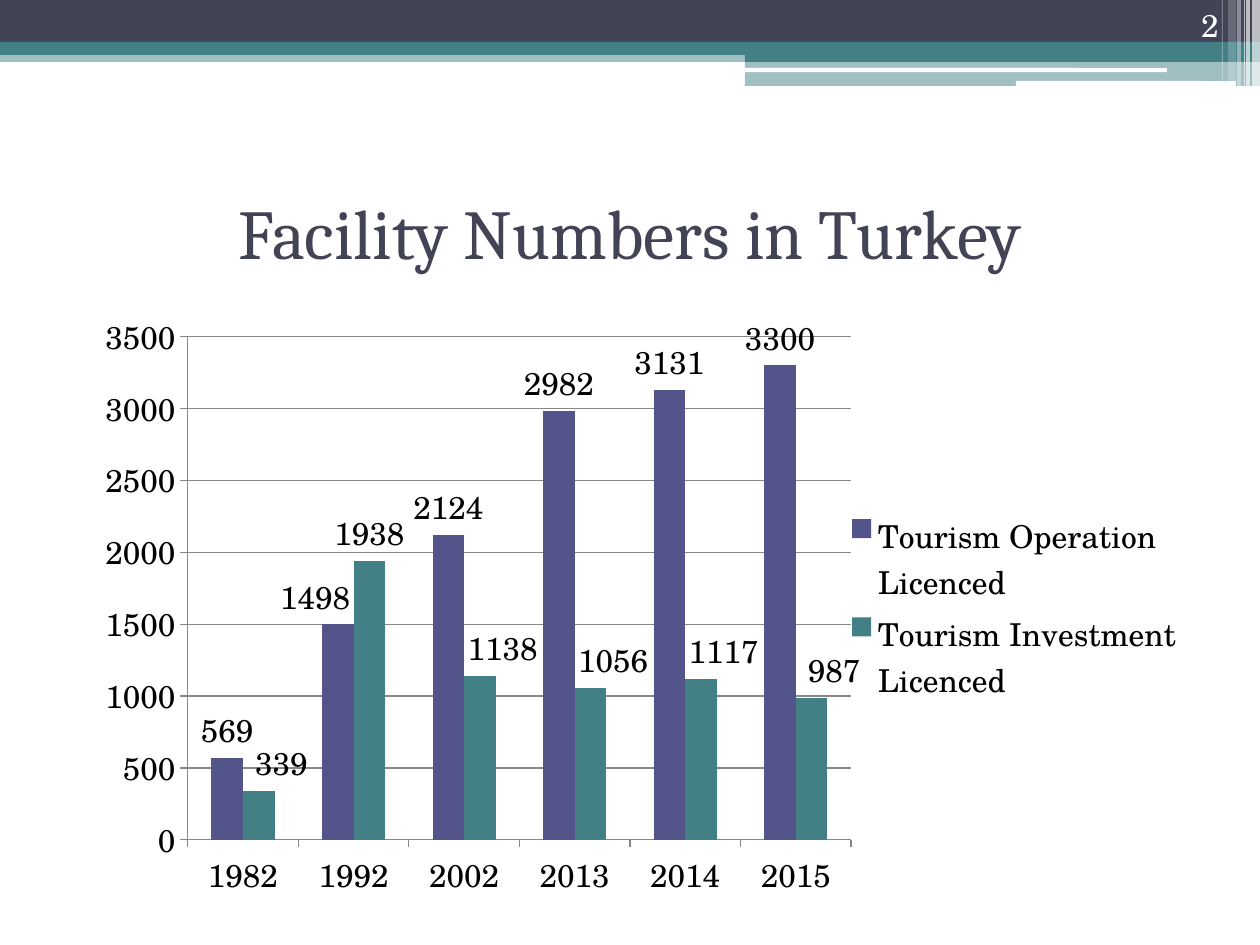
from dataclasses import dataclass
from typing import Any

from lxml import etree
from pptx import Presentation
from pptx.chart.data import CategoryChartData
from pptx.dml.color import RGBColor
from pptx.enum.chart import XL_CHART_TYPE, XL_LABEL_POSITION, XL_LEGEND_POSITION, XL_TICK_MARK
from pptx.enum.shapes import MSO_SHAPE
from pptx.enum.text import MSO_ANCHOR, PP_ALIGN
from pptx.oxml.ns import qn
from pptx.util import Emu, Pt

RECT = MSO_SHAPE.RECTANGLE
ROUNDED = MSO_SHAPE.ROUNDED_RECTANGLE
COLUMNS = XL_CHART_TYPE.COLUMN_CLUSTERED
OUTSIDE_END = XL_LABEL_POSITION.OUTSIDE_END
LEGEND_RIGHT = XL_LEGEND_POSITION.RIGHT
TICK_OUT = XL_TICK_MARK.OUTSIDE
CENTER, RIGHT = PP_ALIGN.CENTER, PP_ALIGN.RIGHT
MIDDLE, BOTTOM = MSO_ANCHOR.MIDDLE, MSO_ANCHOR.BOTTOM

NAVY = RGBColor(0x42, 0x44, 0x56)
TEAL = RGBColor(0x43, 0x80, 0x86)
PURPLE = RGBColor(0x53, 0x54, 0x8A)
WHITE = RGBColor(0xFF, 0xFF, 0xFF)
BLACK = RGBColor(0, 0, 0)
GRAY = RGBColor(0x88, 0x88, 0x88)

PX_PER_INCH = 126
YEARS = ["1982", "1992", "2002", "2013", "2014", "2015"]
FACILITIES = [
    ("Tourism Operation Licenced", PURPLE,
     [569, 1498, 2124, 2982, 3131, 3300], {1: -0.02}),
    ("Tourism Investment Licenced", TEAL,
     [339, 1938, 1138, 1056, 1117, 987],
     {0: 0.02, 2: 0.02, 3: 0.02, 4: 0.02, 5: 0.02}),
]
BANDS = [
    (0, 50, 1260, 12, TEAL, 50),
    (0, 0, 1260, 43, NAVY, 100),
    (0, 42, 1260, 13, TEAL, 100),
    (745, 49, 515, 13, TEAL, 100),
    (745, 61, 515, 25, TEAL, 50),
]
WHITE_RULES = [(745, 68, 422, 4), (1016, 81, 220, 5)]
STRIPES = [
    (1252, 8, 86, 65), (1246, 4, 86, 65), (1244, 1, 86, 60),
    (1237, 4, 86, 40), (1228, 8, 81, 20), (1222, 1, 81, 30),
]


def px(length):
    return Emu(round(length * 914400 / PX_PER_INCH))


def write_text(frame, text, *, font, size, color, align, anchor):
    frame.word_wrap = True
    frame.vertical_anchor = anchor
    paragraph = frame.paragraphs[0]
    paragraph.alignment = align
    run = paragraph.add_run()
    run.text = text
    run.font.name = font
    run.font.size = Pt(size)
    run.font.color.rgb = color


def manual_layout(**values):
    layout = etree.Element(qn("c:layout"))
    manual = etree.SubElement(layout, qn("c:manualLayout"))
    for tag, value in values.items():
        etree.SubElement(manual, qn(f"c:{tag}")).set("val", str(value))
    return layout


@dataclass
class SlideBuilder:
    slide: Any
    title_font: str = "Cambria"
    body_font: str = "TeX Gyre Schola"
    body_size: int = 18

    def block(self, x, y, w, h, color, opacity=100, kind=RECT):
        block = self.slide.shapes.add_shape(kind, px(x), px(y), px(w), px(h))
        block.shadow.inherit = False
        block.line.fill.background()
        block.fill.solid()
        block.fill.fore_color.rgb = color
        if opacity < 100:
            shade = block.element.spPr.find(f".//{qn('a:srgbClr')}")
            etree.SubElement(shade, qn("a:alpha")).set("val", str(opacity * 1000))

    def text(self, x, y, w, h, text, **style):
        box = self.slide.shapes.add_textbox(px(x), px(y), px(w), px(h))
        write_text(box.text_frame, text, **style)

    def column_chart(self, x, y, w, h, categories, series_rows):
        data = CategoryChartData()
        data.categories = categories
        for name, _, values, _ in series_rows:
            data.add_series(name, values)
        chart = self.slide.shapes.add_chart(
            COLUMNS, px(x), px(y), px(w), px(h), data).chart
        chart.has_title = False
        chart.font.name = self.body_font
        chart.font.size = Pt(self.body_size)
        chart.font.color.rgb = BLACK
        chart.has_legend = True
        chart.legend.position = LEGEND_RIGHT
        chart.legend.include_in_layout = False
        self.style_axes(chart)

        plot = chart.plots[0]
        plot.gap_width = 150
        plot.overlap = 0
        plot.vary_by_categories = False
        for series, (_, color, _, shifts) in zip(plot.series, series_rows):
            series.format.fill.solid()
            series.format.fill.fore_color.rgb = color
            labels = series.data_labels
            labels.show_value = True
            labels.position = OUTSIDE_END
            for index in shifts:
                series.points[index].data_label.position = OUTSIDE_END
        self.shift_labels(chart, series_rows)

        plot_area = chart.element.find(f".//{qn('c:plotArea')}")
        for old in plot_area.findall(qn("c:layout")):
            plot_area.remove(old)
        plot_area.insert(0, manual_layout(
            layoutTarget="inner", xMode="edge", yMode="edge",
            x=0.11, y=0.045, w=0.585, h=0.844))

    def style_axes(self, chart):
        values = chart.value_axis
        values.minimum_scale, values.maximum_scale = 0, 3500
        values.major_unit = 500
        values.has_major_gridlines = True
        for axis in (chart.category_axis, values):
            axis.major_tick_mark = TICK_OUT
        for part in (chart.category_axis, values, values.major_gridlines):
            part.format.line.color.rgb = GRAY
            part.format.line.width = Pt(0.75)

    def shift_labels(self, chart, series_rows):
        all_series = chart.element.iter(qn("c:ser"))
        for series, (_, _, _, shifts) in zip(all_series, series_rows):
            for label in series.iter(qn("c:dLbl")):
                index = label.find(qn("c:idx"))
                shift = shifts[int(index.get("val"))]
                index.addnext(manual_layout(x=shift, y=0))


def main():
    deck = Presentation()
    deck.slide_width, deck.slide_height = px(1260), px(945)
    page = SlideBuilder(deck.slides.add_slide(deck.slide_layouts[6]))
    for band in BANDS:
        page.block(*band)
    for rule in WHITE_RULES:
        page.block(*rule, WHITE, kind=ROUNDED)
    for x, width, height, opacity in STRIPES:
        page.block(x, 0, width, height, WHITE, opacity)
    page.text(63, 158, 1134, 147, "Facility Numbers in Turkey",
              font=page.title_font, size=40, color=NAVY, align=CENTER, anchor=MIDDLE)
    page.column_chart(63, 310, 1134, 596, YEARS, FACILITIES)
    page.text(1126, 0, 105, 50, "2", font=page.body_font, size=page.body_size,
              color=WHITE, align=RIGHT, anchor=BOTTOM)
    deck.save("out.pptx")


if __name__ == "__main__":
    main()
